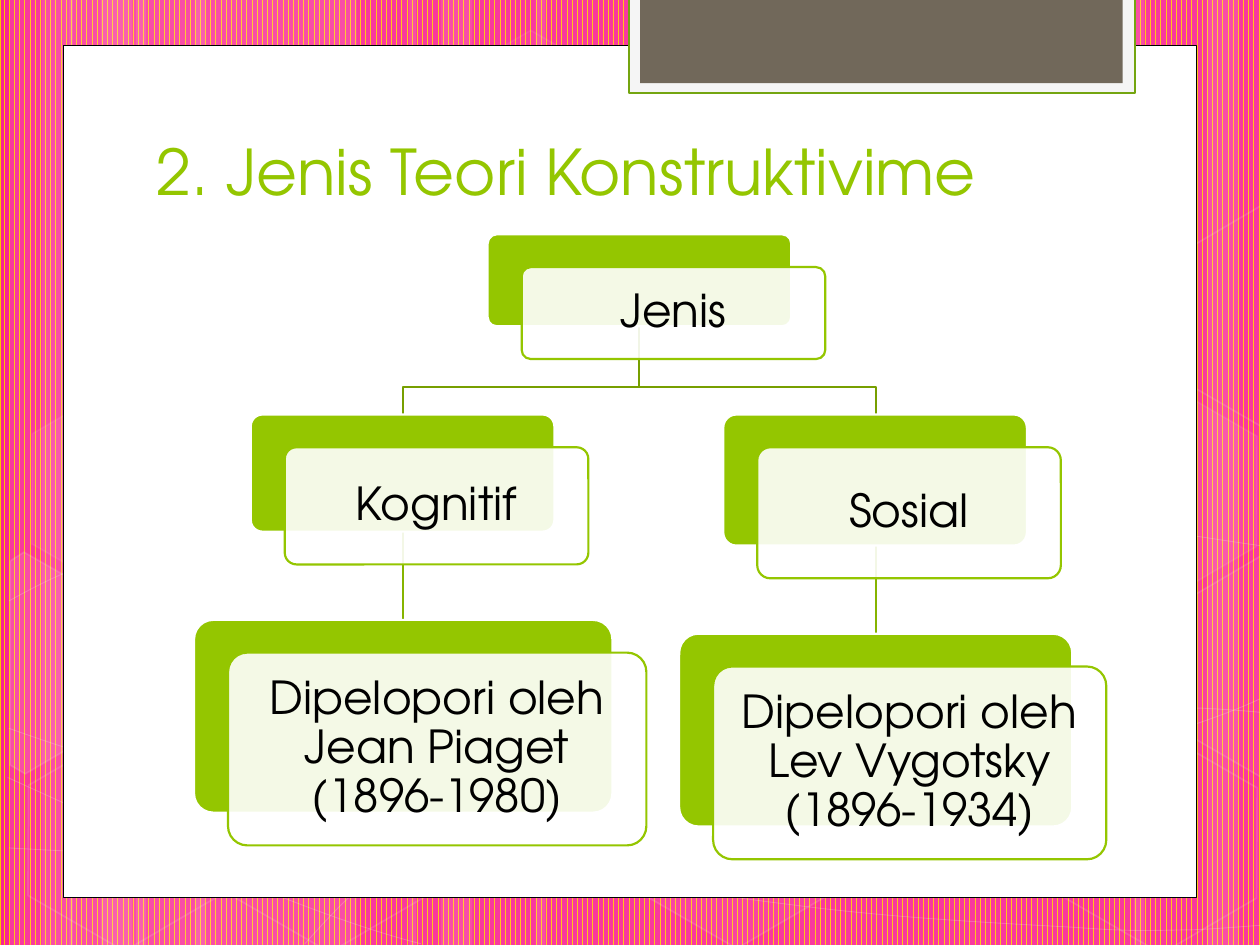
from collections import namedtuple
from math import cos, radians, sin
from lxml.etree import SubElement
from pptx import Presentation
from pptx.dml.color import RGBColor
from pptx.enum.dml import MSO_PATTERN
from pptx.enum.shapes import MSO_SHAPE
from pptx.enum.text import MSO_ANCHOR, MSO_AUTO_SIZE, PP_ALIGN
from pptx.oxml.ns import qn
from pptx.util import Inches, Pt

Box = namedtuple("Box", "left top width height")

FONT = "TeX Gyre Adventor"
WHITE = RGBColor(0xFF, 0xFF, 0xFF)
BLACK = RGBColor(0, 0, 0)
PINK = RGBColor(0xF9, 0x23, 0x93)
AMBER = RGBColor(0xFF, 0xC0, 0x00)
GREEN = RGBColor(0x94, 0xC6, 0x00)
BRANCH_GREEN = RGBColor(0x77, 0x9F, 0x00)
LEAF_GREEN = RGBColor(0x86, 0xB4, 0x00)
TAB_GREEN = RGBColor(0x74, 0xA5, 0x10)
TAB_EDGE = RGBColor(0xF5, 0xF5, 0xF5)
TAB_BROWN = RGBColor(0x71, 0x68, 0x5A)

BANDS = [(1.08, 1.75), (0.08, 0.5), (0.33, 0.83), (1.55, 1.75), (0.55, 0.5), (0.8, 0.83),
         (7.33, 1.75), (9.58, 0.5), (9, 0.83), (4.25, 3.08), (3.25, 0.5), (3.5, 0.83)]
CURVES = [
    [(0.07, 6.73), (0.61, 6.76), (1.15, 6.79), (1.9, 6.78), (2.65, 6.77), (3.58, 6.75),
     (4.58, 6.65), (5.58, 6.55), (7, 6.36), (7.92, 6.17), (8.83, 5.98), (9.77, 5.68),
     (10.07, 5.51)],
    [(0.07, 4.77), (0.36, 4.61), (0.65, 4.46), (1.21, 4.31), (1.78, 4.16), (2.59, 3.94),
     (3.47, 3.87), (4.36, 3.8), (5.44, 3.79), (6.54, 3.87), (7.64, 3.95), (9.47, 4.26),
     (10.07, 4.34)],
    [(0.06, 6.17), (1.27, 6.72), (2.47, 7.27), (3.34, 7.49)],
    [(0.07, 5.78), (0.38, 5.89), (0.7, 6), (1.28, 6.16), (1.86, 6.31), (2.73, 6.56),
     (3.57, 6.73), (4.4, 6.9), (5.45, 7.08), (6.28, 7.18), (7.11, 7.29), (8, 7.33),
     (8.53, 7.36), (9.05, 7.4), (9.19, 7.38), (9.45, 7.38), (9.71, 7.37), (9.89, 7.35),
     (10.07, 7.34)],
    [(2.42, 7.49), (2.6, 7.29), (2.78, 7.09), (3.02, 6.91), (3.26, 6.73), (3.6, 6.53),
     (3.88, 6.39), (4.16, 6.25), (4.33, 6.19), (4.7, 6.09), (5.06, 5.99), (5.73, 5.85),
     (6.08, 5.78), (6.44, 5.71), (6.49, 5.71), (6.8, 5.69), (7.11, 5.66), (7.6, 5.63),
     (7.94, 5.62), (8.29, 5.61), (8.86, 5.62), (8.86, 5.62), (9.08, 5.62), (9.31, 5.62),
     (9.53, 5.62), (9.71, 5.63), (9.88, 5.64), (10.06, 5.66)],
]
HEXAGONS = [(3.34, 0.36, 4, 8), (4.97, 5.89, 6, 12), (0.11, 5.91, None, 12),
            (0.14, 3.12, 7, 8), (1.74, 5.92, None, 12), (7.53, 4.53, 10, 12),
            (8.34, 5.93, None, 12), (8.34, 3.14, 7, 8)]
CUT_HEXAGONS = [
    ((0.36, 5.35), 10,
     [(0.08, 4.45), (0.19, 4.38), (0.96, 4.82), (0.95, 5.7), (0.2, 6.14), (0.08, 6.07)]),
    ((9.85, 5.2), 4,
     [(9.26, 4.85), (10.01, 4.41), (10.09, 4.46), (10.09, 6.13), (10.02, 6.17), (9.26, 5.73)]),
    ((9.85, 2.41), None,
     [(9.26, 2.07), (10.01, 1.63), (10.1, 1.68), (10.09, 3.35), (10.02, 3.39), (9.26, 2.95)]),
]


def fade(solid_fill, percent):
    """Set the opacity of a solid fill element."""
    SubElement(solid_fill[0], qn("a:alpha"), val=str(percent * 1000))


def paint(shape, fill=None, fill_opacity=100, line=None, line_width=1.25, line_opacity=100):
    """Set the fill and outline of a shape and drop its shadow."""
    shape.shadow.inherit = False
    properties = shape._element.spPr
    if fill is None:
        shape.fill.background()
    else:
        shape.fill.solid()
        shape.fill.fore_color.rgb = fill
        if fill_opacity < 100:
            fade(properties.find(qn("a:solidFill")), fill_opacity)
    if line is None:
        shape.line.fill.background()
    else:
        shape.line.color.rgb = line
        shape.line.width = Pt(line_width)
        if line_opacity < 100:
            fade(properties.find(qn("a:ln")).find(qn("a:solidFill")), line_opacity)


def add_preset(page, kind, box, **style):
    """Add a painted preset shape in the given box."""
    shape = page.shapes.add_shape(kind, *map(Inches, box))
    paint(shape, **style)
    return shape


def add_outline(page, points, close=False, **style):
    """Add a painted outline through points in inches."""
    corners = [(Inches(x), Inches(y)) for x, y in points]
    builder = page.shapes.build_freeform(*corners[0])
    builder.add_line_segments(corners[1:], close=close)
    shape = builder.convert_to_shape()
    paint(shape, **style)
    return shape


def add_curve(page, points, **style):
    """Add an outline whose points are taken as a chain of cubic curves."""
    shape = add_outline(page, points, **style)
    segments = list(shape._element.iter(qn("a:lnTo")))
    track = segments[0].getparent()
    for first in range(0, len(segments), 3):
        cubic = SubElement(track, qn("a:cubicBezTo"))
        for segment in segments[first:first + 3]:
            cubic.append(segment[0])
            track.remove(segment)


def turn(points, center, degrees):
    """Return the points turned around a center."""
    c, s = cos(radians(degrees)), sin(radians(degrees))
    return [(center[0] + (x - center[0]) * c - (y - center[1]) * s,
             center[1] + (x - center[0]) * s + (y - center[1]) * c) for x, y in points]


def write_text(shape, text, size, color, align, anchor, inset=None, line_spacing=None):
    """Write one formatted paragraph into a shape."""
    frame = shape.text_frame
    frame.word_wrap = True
    frame.auto_size = MSO_AUTO_SIZE.NONE
    frame.vertical_anchor = anchor
    if inset is not None:
        frame.margin_left = frame.margin_right = Inches(inset)
        frame.margin_top = frame.margin_bottom = Inches(inset)
    para = frame.paragraphs[0]
    para.alignment = align
    para.line_spacing = line_spacing
    span = para.add_run()
    span.text = text
    span.font.name = FONT
    span.font.size = Pt(size)
    span.font.color.rgb = color


def add_backdrop(page, box):
    """Fill the background and lay faint bands, curves and hexagons over it."""
    fill = page.background.fill
    fill.patterned()
    fill.pattern = MSO_PATTERN.DARK_VERTICAL
    fill.fore_color.rgb = PINK
    fill.back_color.rgb = AMBER
    for offset, width in BANDS:
        add_preset(page, MSO_SHAPE.RECTANGLE, Box(box.left + offset, box.top, width, box.height),
                   fill=WHITE, fill_opacity=10)
    for points in CURVES:
        add_curve(page, [(box.left + x, box.top + y) for x, y in points],
                  line=WHITE, line_width=0.5, line_opacity=20)
    for x, y, opacity, line_opacity in HEXAGONS:
        hexagon = add_preset(page, MSO_SHAPE.HEXAGON, Box(box.left + x, box.top + y, 1.75, 1.52),
                             fill=WHITE if opacity else None, fill_opacity=opacity or 100,
                             line=WHITE, line_width=1, line_opacity=line_opacity)
        hexagon.adjustments[0] = 0.285
        hexagon.rotation = 30
    for center, opacity, points in CUT_HEXAGONS:
        upright = [(box.left + x, box.top + y) for x, y in turn(points, center, -30)]
        cut_hexagon = add_outline(page, upright, close=True, fill=WHITE if opacity else None,
                                  fill_opacity=opacity or 100, line=WHITE, line_width=1,
                                  line_opacity=12)
        cut_hexagon.rotation = 30


def add_panel(page, box):
    """Add the white panel with the brown tab on its top edge."""
    add_preset(page, MSO_SHAPE.RECTANGLE, box, fill=WHITE, line=BLACK, line_width=0.5)
    tab = Box(box.left + 4.49, box.top - 0.38, 4.02, 0.76)
    add_preset(page, MSO_SHAPE.RECTANGLE, tab, fill=TAB_EDGE, line=TAB_GREEN)
    add_preset(page, MSO_SHAPE.RECTANGLE, Box(tab.left + 0.09, tab.top, 3.83, 0.68), fill=TAB_BROWN)


def add_title(page, box, text):
    """Place the title placeholder in front of the panel."""
    title = page.shapes.title
    title.left, title.top, title.width, title.height = map(Inches, box)
    page.shapes._spTree.append(title._element)
    write_text(title, text, 36, GREEN, PP_ALIGN.LEFT, MSO_ANCHOR.BOTTOM)


def add_card(page, box, text):
    """Add a green card with an offset translucent card holding the text."""
    front = Box(box.left + 0.27, box.top + 0.26, box.width, box.height)
    back_card = add_preset(page, MSO_SHAPE.ROUNDED_RECTANGLE, box, fill=GREEN, line=WHITE)
    front_card = add_preset(page, MSO_SHAPE.ROUNDED_RECTANGLE, front,
                            fill=WHITE, fill_opacity=90, line=GREEN)
    back_card.adjustments[0] = front_card.adjustments[0] = 0.1
    write_text(front_card, text, 26, BLACK, PP_ALIGN.CENTER, MSO_ANCHOR.MIDDLE,
               inset=0.11, line_spacing=0.9)


def add_hierarchy(page, box):
    """Add the tree: one root, two branches and a leaf under each."""
    center, root_bottom, branch_top = box.left + 3.53, box.top + 0.73, box.top + 1.43
    bend = root_bottom + 0.48
    branches = [("Kognitif", 0.93, "Dipelopori oleh Jean Piaget (1896-1980)", 3.32, -1.87),
                ("Sosial", 1.04, "Dipelopori oleh Lev Vygotsky (1896-1934)", 3.12, 1.88)]
    cards = [(Box(center - 1.2, box.top, 2.41, 0.73), "Jenis")]
    for branch, height, leaf, leaf_width, offset in branches:
        middle = center + offset
        bottom = branch_top + height
        leaf_top = bottom + 0.7
        add_outline(page, [(center, root_bottom), (center, bend), (middle, bend),
                           (middle, branch_top)], line=BRANCH_GREEN)
        add_outline(page, [(middle, bottom), (middle, leaf_top)], line=LEAF_GREEN)
        cards.append((Box(middle - 1.21, branch_top, 2.41, height), branch))
        cards.append((Box(middle - leaf_width / 2, leaf_top, leaf_width, 1.53), leaf))
    for card, text in cards:
        add_card(page, card, text)


def main():
    """Build the slide and save the deck."""
    deck = Presentation()
    deck.slide_width, deck.slide_height = Inches(10), Inches(7.5)
    page = deck.slides.add_slide(deck.slide_layouts[5])
    add_backdrop(page, Box(0, 0, 10, 7.5))
    add_panel(page, Box(0.5, 0.36, 9, 6.76))
    add_title(page, Box(1.14, 1.12, 7.68, 0.58), "2. Jenis Teori Konstruktivime")
    add_hierarchy(page, Box(1.54, 1.86, 7.24, 4.96))
    deck.save("out.pptx")


if __name__ == "__main__":
    main()
